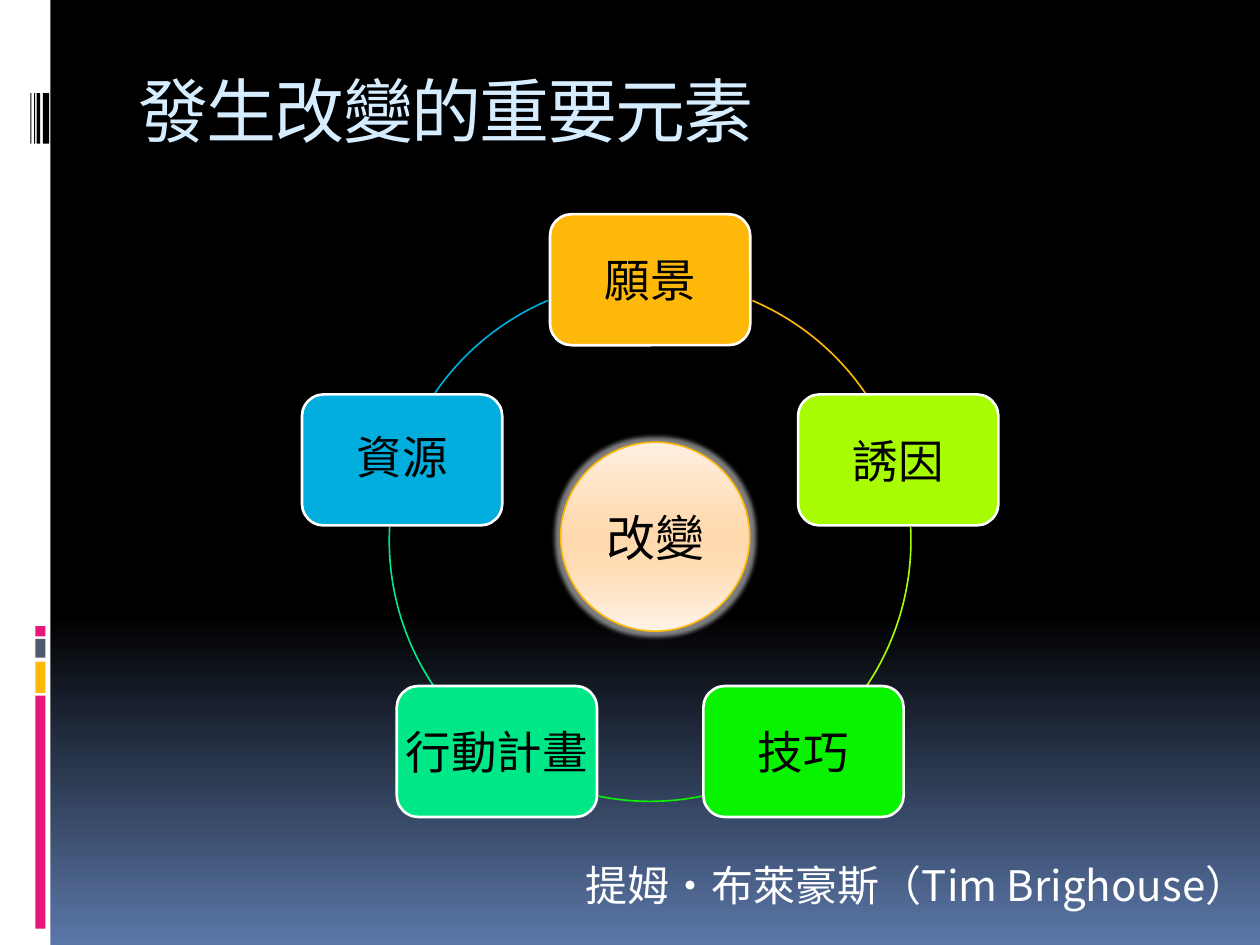
from lxml.etree import SubElement
from pptx import Presentation
from pptx.dml.color import RGBColor
from pptx.enum.shapes import MSO_SHAPE
from pptx.enum.text import MSO_ANCHOR, PP_ALIGN
from pptx.oxml.ns import qn
from pptx.util import Inches, Pt
from math import cos, radians, sin

FONT = "Noto Sans CJK SC"
COLORS = {
    "white": "FFFFFF", "black": "000000", "title": "D6ECFF", "pink": "EA157A",
    "amber": "FEB80A", "slate": "4E5B6F", "lime": "A7FC01", "green": "09F200",
    "mint": "00E788", "blue": "00ADDC",
}
BACKDROP_STOPS = [(0, "000000"), (65, "000000"), (100, "5B77A8")]
HUB_STOPS = [(0, "FFF0E1"), (40, "FFDCB4"), (50, "FFD9AD"), (65, "FFDCB4"), (100, "FFF3E7")]
ELEMENTS = [
    ("願景", "amber", (293.1, 325.6), 0.11, 1),
    ("誘因", "lime", (357, 33.8), 0.11, 1),
    ("技巧", "green", (78.6, 101.4), 0.11, 1),
    ("行動計畫", "mint", (146.2, 183), 0, 1),
    ("資源", "blue", (214.4, 246.9), 0, 0.9),
]


def rgb(name):
    """Return the palette colour of that name."""
    return RGBColor.from_string(COLORS[name])


def apply_format(target, values):
    """Set each attribute of the target from a dict."""
    for attribute, value in values.items():
        setattr(target, attribute, value)


def paint_gradient(fill, owner, stops):
    """Give the fill a top-to-bottom gradient with the given stops."""
    fill.gradient()
    fill.gradient_angle = 270
    stop_list = next(owner.iter(qn("a:gsLst")))
    for default_stop in list(stop_list):
        stop_list.remove(default_stop)
    for percent, color in stops:
        stop = SubElement(stop_list, qn("a:gs"), pos=str(percent * 1000))
        SubElement(stop, qn("a:srgbClr"), val=color)


def write_text(shape, text, size, color, frame_format, paragraph_format):
    """Write one formatted paragraph into the shape and return it."""
    frame = shape.text_frame
    apply_format(frame, {"word_wrap": True, **frame_format})
    paragraph = frame.paragraphs[0]
    apply_format(paragraph, paragraph_format)
    run = paragraph.add_run()
    run.text = text
    apply_format(run.font, {"name": FONT, "size": Pt(size)})
    run.font.color.rgb = rgb(color)
    SubElement(run.font._element, qn("a:ea"), typeface=FONT)
    return paragraph


def add_outline(slide, kind, box, fill=None, line=None, width=1):
    """Add a flat preset shape in the box, given in inches."""
    shape = slide.shapes.add_shape(kind, *map(Inches, box))
    shape.shadow.inherit = False
    if fill:
        shape.fill.solid()
        shape.fill.fore_color.rgb = rgb(fill)
    else:
        shape.fill.background()
    if line:
        shape.line.color.rgb = rgb(line)
        shape.line.width = Pt(width)
    else:
        shape.line.fill.background()
    return shape


def place(placeholder, box):
    """Move the placeholder to the box, given in inches."""
    apply_format(placeholder, dict(zip(("left", "top", "width", "height"), map(Inches, box))))


def add_sidebar(slide, box):
    """Draw the white strip with its colour bars and barcode."""
    left, top, width, height = box
    add_outline(slide, MSO_SHAPE.RECTANGLE, box, "white")
    bars = [("pink", 4.97, 0.08), ("slate", 5.07, 0.15), ("amber", 5.25, 0.25), ("pink", 5.52, 1.85)]
    for color, offset, length in bars:
        add_outline(slide, MSO_SHAPE.RECTANGLE, (left + 0.28, top + offset, 0.08, length), color)
    for offset, thickness in [(0.24, 0.01), (0.27, 0.01), (0.29, 0.03), (0.34, 0.05)]:
        add_outline(slide, MSO_SHAPE.RECTANGLE, (left + offset, top + 0.74, thickness, 0.4), "black")


def add_title(slide, box):
    """Fill the title placeholder."""
    place(slide.shapes.title, box)
    heading = write_text(slide.shapes.title, "發生改變的重要元素", 40, "title",
                         {"vertical_anchor": MSO_ANCHOR.TOP},
                         {"alignment": PP_ALIGN.LEFT, "line_spacing": 0.9})
    heading.runs[0].font._element.set("spc", "-100")


def add_attribution(slide, box):
    """Fill the body placeholder with the author's name."""
    body = slide.placeholders[1]
    place(body, box)
    author = write_text(body, "提姆‧布萊豪斯（Tim Brighouse）", 24, "white",
                        {"vertical_anchor": MSO_ANCHOR.TOP},
                        {"alignment": PP_ALIGN.RIGHT, "line_spacing": 0.9, "space_before": Pt(7)})
    properties = author._p.get_or_add_pPr()
    properties.set("marL", str(Inches(0.45)))
    properties.set("indent", str(Inches(-0.38)))
    SubElement(properties, qn("a:buNone"))


def add_cycle(slide, box):
    """Place the elements evenly on the ring inside the box, joined by arcs."""
    left, top, diameter, _ = box
    radius = diameter / 2
    node_width, node_height = 1.59, 1.04
    for index, (label, color, angles, side_inset, spacing) in enumerate(ELEMENTS):
        arc = add_outline(slide, MSO_SHAPE.ARC, box, line=color, width=0.94)
        for position, angle in enumerate(angles):
            arc.adjustments[position] = angle * 0.6
        direction = radians(360 / len(ELEMENTS) * index - 90)
        node_left = left + radius + radius * cos(direction) - node_width / 2
        node_top = top + radius + radius * sin(direction) - node_height / 2
        node = add_outline(slide, MSO_SHAPE.ROUNDED_RECTANGLE,
                           (node_left, node_top, node_width, node_height), color, "white", 1.5)
        insets = {"margin_left": Inches(side_inset), "margin_right": Inches(side_inset),
                  "margin_top": Inches(0.11), "margin_bottom": Inches(0.11)}
        write_text(node, label, 26, "black", {"vertical_anchor": MSO_ANCHOR.MIDDLE, **insets},
                   {"alignment": PP_ALIGN.CENTER, "line_spacing": spacing})


def add_hub(slide, box):
    """Draw the glowing circle in the middle of the ring."""
    hub = add_outline(slide, MSO_SHAPE.OVAL, box, line="amber", width=0.94)
    paint_gradient(hub.fill, hub._element, HUB_STOPS)
    glow = SubElement(next(hub._element.iter(qn("a:effectLst"))), qn("a:glow"), rad=str(Inches(0.07)))
    glow_color = SubElement(glow, qn("a:srgbClr"), val=COLORS["white"])
    SubElement(glow_color, qn("a:alpha"), val="50000")
    write_text(hub, "改變", 28, "black", {"vertical_anchor": MSO_ANCHOR.MIDDLE},
               {"alignment": PP_ALIGN.CENTER})


def main():
    """Build the slide and save it."""
    presentation = Presentation()
    apply_format(presentation, {"slide_width": Inches(10), "slide_height": Inches(7.5)})
    slide = presentation.slides.add_slide(presentation.slide_layouts[1])
    paint_gradient(slide.background.fill, slide._element, BACKDROP_STOPS)
    add_sidebar(slide, (0, 0, 0.4, 7.5))
    add_title(slide, (1, 0.56, 8.5, 1))
    add_attribution(slide, (0.5, 6.82, 9.5, 0.63))
    add_cycle(slide, (3.09, 2.22, 4.14, 4.14))
    add_hub(slide, (4.45, 3.51, 1.5, 1.5))
    presentation.save("out.pptx")


if __name__ == "__main__":
    main()
